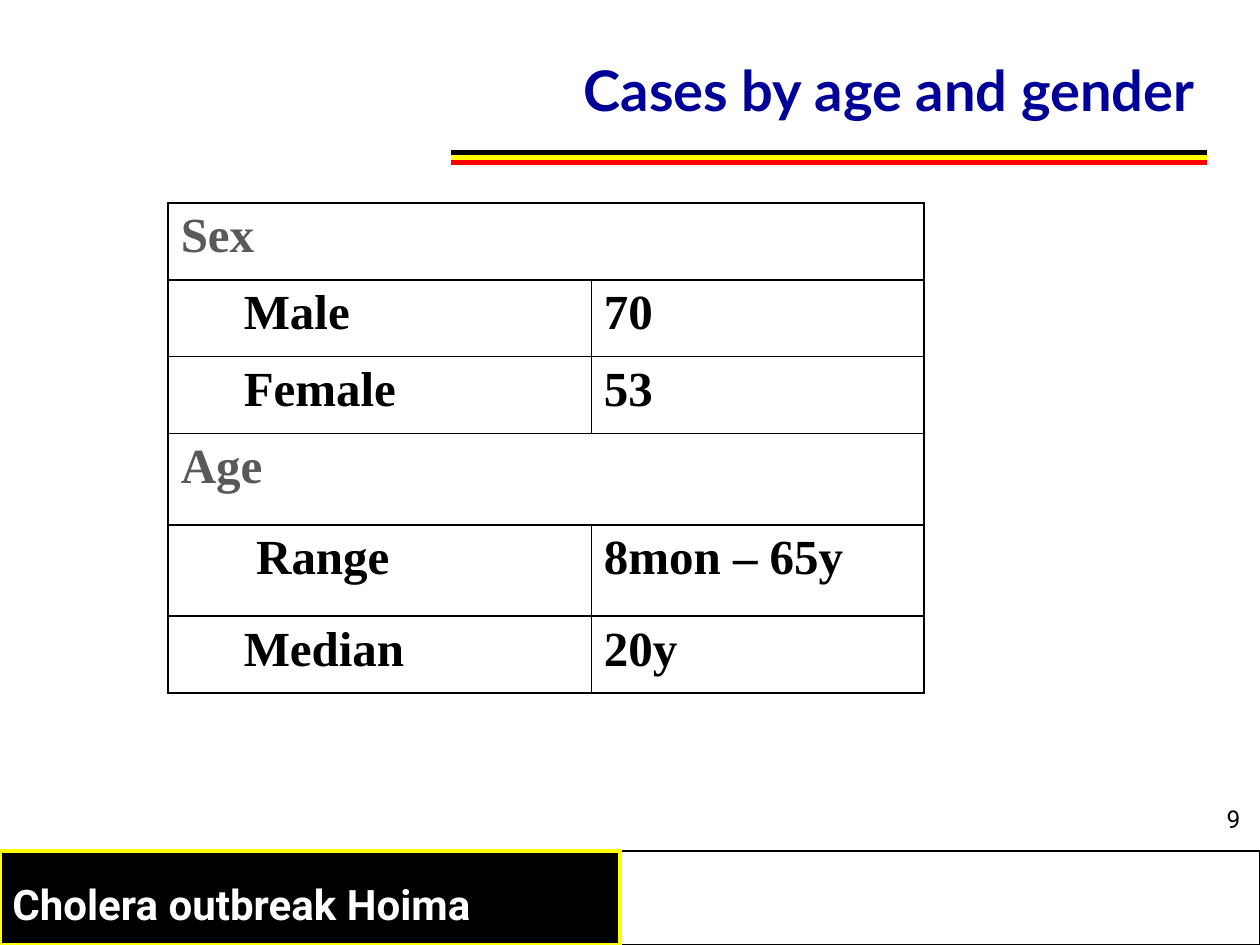
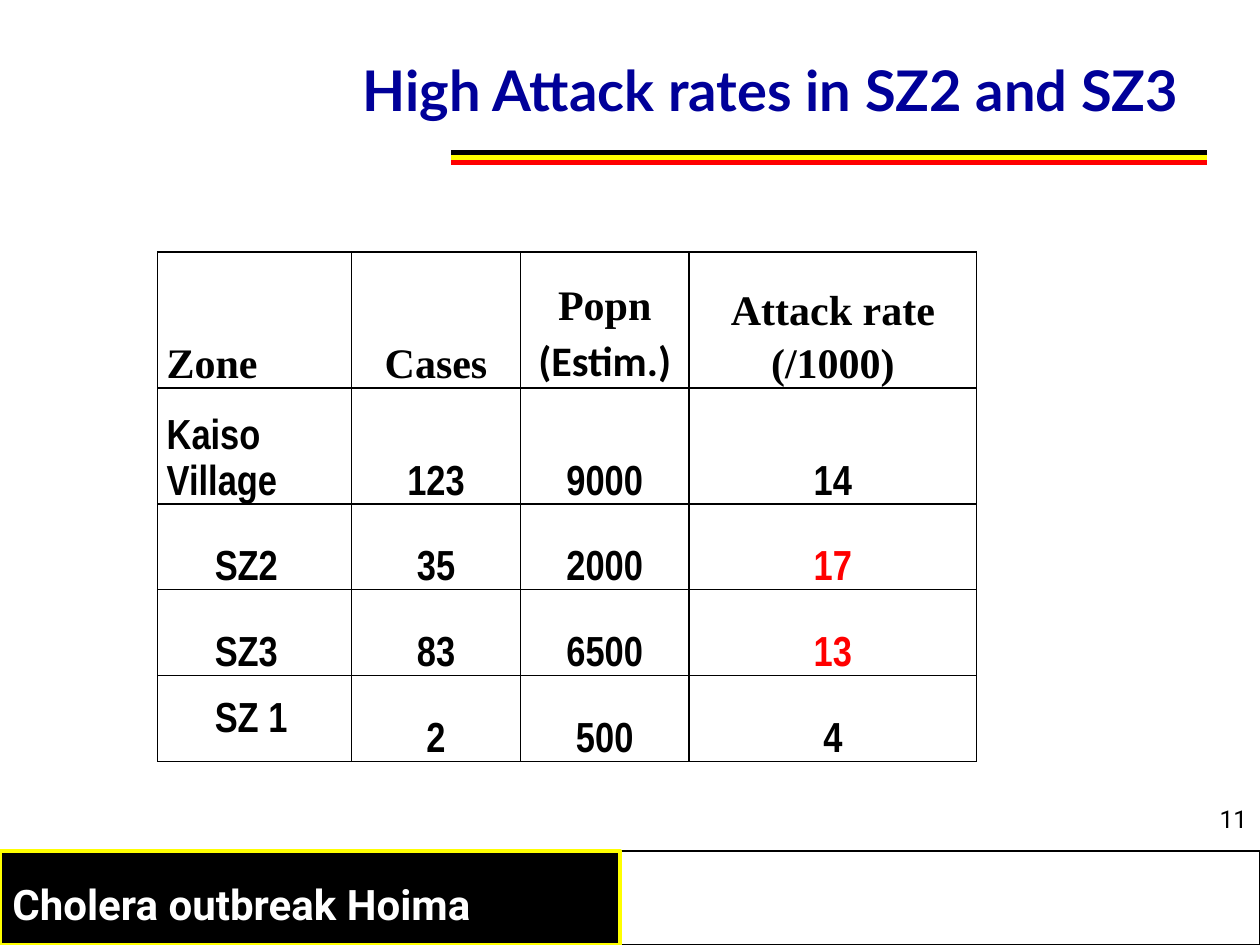
"""Build two cholera outbreak slides: cases by age and gender, and attack rates by zone."""
from dataclasses import dataclass

from lxml import etree
from pptx import Presentation
from pptx import util as u
from pptx.dml.color import RGBColor
from pptx.enum import shapes, text
from pptx.oxml import ns


@dataclass(frozen=True)
class Theme:
    black: str = "000000"
    white: str = "FFFFFF"
    yellow: str = "FFFF00"
    red: str = "FF0000"
    navy: str = "000099"
    grey: str = "595959"
    title_font: str = "Lato"
    band_font: str = "Roboto"
    serif: str = "Times New Roman"
    sans: str = "Calibri"
    narrow: str = "Arial Narrow"
    title_size: int = 32
    cases_size: int = 28
    rates_size: int = 24
    band_size: int = 24
    number_size: int = 14


theme = Theme()
LEFT, CENTER, RIGHT = text.PP_ALIGN.LEFT, text.PP_ALIGN.CENTER, text.PP_ALIGN.RIGHT
TOP, MIDDLE, BOTTOM = text.MSO_ANCHOR.TOP, text.MSO_ANCHOR.MIDDLE, text.MSO_ANCHOR.BOTTOM


def add_run(paragraph, words, font, size, color, bold=True, align=LEFT):
    paragraph.alignment = align
    run = paragraph.add_run()
    run.text = words
    run.font.name = font
    run.font.size = u.Pt(size)
    run.font.bold = bold
    run.font.color.rgb = RGBColor.from_string(color)


def rule_cell(cell, anchor):
    cell.vertical_anchor = anchor
    cell.fill.background()
    properties = cell._tc.get_or_add_tcPr()
    for position, side in enumerate(("lnL", "lnR", "lnT", "lnB")):
        border = etree.Element(ns.qn(f"a:{side}"), w=str(u.Pt(1)))
        solid = etree.SubElement(border, ns.qn("a:solidFill"))
        etree.SubElement(solid, ns.qn("a:srgbClr"), val=theme.black)
        properties.insert(position, border)


deck = Presentation()
deck.slide_width, deck.slide_height = u.Cm(25.4), u.Cm(19.05)

pages = [("Cases by age and gender", "9", 0.25), ("High Attack rates in SZ2 and SZ3", "11", 0.57)]
slides = []
for heading, number, title_inset in pages:
    slide = deck.slides.add_slide(deck.slide_layouts[5])
    slides.append(slide)

    page_number = slide.shapes.add_textbox(u.Cm(24.33), u.Cm(16.08), u.Cm(1.07), u.Cm(0.84))
    page_number.text_frame.word_wrap = False
    add_run(page_number.text_frame.paragraphs[0], number, theme.band_font, theme.number_size,
            theme.black, bold=False, align=CENTER)

    for left, width, fill, line, weight in [
        (12.5, 12.9, None, theme.black, 1),
        (0, 12.5, theme.black, theme.yellow, 2.25),
    ]:
        band = slide.shapes.add_shape(shapes.MSO_SHAPE.RECTANGLE, u.Cm(left), u.Cm(17.15),
                                      u.Cm(width), u.Cm(1.9))
        band.shadow.inherit = False
        if fill:
            band.fill.solid()
            band.fill.fore_color.rgb = RGBColor.from_string(fill)
        else:
            band.fill.background()
        band.line.color.rgb = RGBColor.from_string(line)
        band.line.width = u.Pt(weight)

    for order, color in enumerate((theme.black, theme.yellow, theme.red)):
        height = u.Cm(3.07 + 0.1 * order)
        stripe = slide.shapes.add_connector(shapes.MSO_CONNECTOR.STRAIGHT, u.Cm(9.1), height,
                                            u.Cm(24.34), height)
        stripe.line.color.rgb = RGBColor.from_string(color)
        stripe.line.width = u.Pt(3)
        etree.SubElement(stripe._element.spPr, ns.qn("a:effectLst"))

    topic = slide.shapes.add_textbox(0, u.Cm(17.58), u.Cm(11.85), u.Cm(1.27))
    topic.text_frame.word_wrap = True
    add_run(topic.text_frame.paragraphs[0], "Cholera outbreak Hoima", theme.band_font,
            theme.band_size, theme.white)

    title = slide.shapes.title
    title.left, title.top, title.width, title.height = u.Cm(1.06), u.Cm(0.64), u.Cm(23.28), u.Cm(2.33)
    title.text_frame.vertical_anchor = MIDDLE
    title.text_frame.margin_right = u.Cm(title_inset)
    add_run(title.text_frame.paragraphs[0], heading, theme.title_font, theme.title_size,
            theme.navy, align=RIGHT)

cases_slide, rates_slide = slides

case_rows = [
    ("Sex", None, 0, 1.55),
    ("Male", "70", 1.27, 1.55),
    ("Female", "53", 1.27, 1.55),
    ("Age", None, 0, 1.84),
    ("Range", "8mon – 65y", 1.52, 1.84),
    ("Median", "20y", 1.27, 1.55),
]
cases = cases_slide.shapes.add_table(len(case_rows), 2, u.Cm(3.39), u.Cm(4.09),
                                     u.Cm(15.24), u.Cm(9.88)).table
cases.first_row = cases.horz_banding = False
for column, width in zip(cases.columns, (8.53, 6.71)):
    column.width = u.Cm(width)
for row, (label, value, indent, height) in enumerate(case_rows):
    cases.rows[row].height = u.Cm(height)
    for cell in cases.rows[row].cells:
        rule_cell(cell, TOP)
    name_cell, value_cell = cases.rows[row].cells
    paragraph = name_cell.text_frame.paragraphs[0]
    paragraph._p.get_or_add_pPr().set("marL", str(u.Cm(indent)))
    add_run(paragraph, label, theme.serif, theme.cases_size, theme.black if value else theme.grey)
    if value:
        add_run(value_cell.text_frame.paragraphs[0], value, theme.serif, theme.cases_size, theme.black)
    else:
        name_cell.merge(value_cell)

rate_rows = [
    ("Zone", "Cases", "Popn\n(Estim.)", "Attack rate (/1000)"),
    ("Kaiso Village", "123", "9000", "14"),
    ("SZ2", "35", "2000", "17"),
    ("SZ3", "83", "6500", "13"),
    ("SZ 1", "2", "500", "4"),
]
rates = rates_slide.shapes.add_table(len(rate_rows), 4, u.Cm(3.18), u.Cm(5.08),
                                     u.Cm(16.51), u.Cm(9.75)).table
rates.first_row = rates.horz_banding = False
for column, width in zip(rates.columns, (3.91, 3.4, 3.4, 5.8)):
    column.width = u.Cm(width)
for row, (values, height) in enumerate(zip(rate_rows, (2.74, 1.83, 1.73, 1.73, 1.73))):
    rates.rows[row].height = u.Cm(height)
    for column, value in enumerate(values):
        cell = rates.cell(row, column)
        rule_cell(cell, MIDDLE if value == "SZ 1" else BOTTOM)
        cell.margin_left = cell.margin_right = u.Cm(0.18)
        cell.margin_top = cell.margin_bottom = 0
        for order, words in enumerate(value.split("\n")):
            paragraph = cell.text_frame.add_paragraph() if order else cell.text_frame.paragraphs[0]
            paragraph.line_spacing = 1.15
            if value.startswith("SZ"):
                paragraph._p.get_or_add_pPr().set("indent", str(u.Cm(0.97)))
            font = theme.narrow if row else theme.sans if order else theme.serif
            color = theme.red if column == 3 and value in ("17", "13") else theme.black
            add_run(paragraph, words, font, theme.rates_size, color, align=CENTER if column else LEFT)

deck.save("out.pptx")
